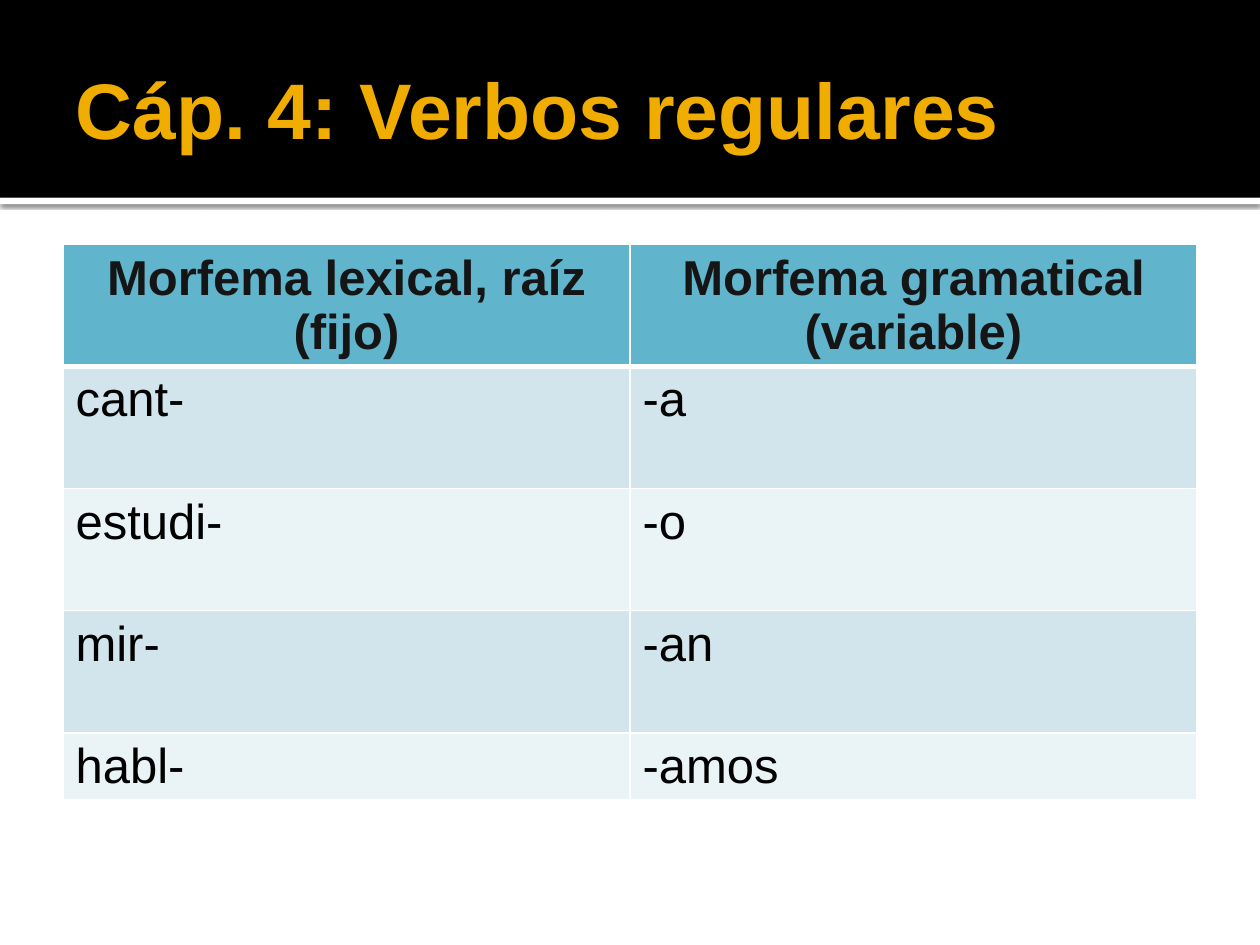
"""Build the slide on regular verbs: a title band over a table of morphemes."""
from typing import NamedTuple

from lxml.etree import SubElement
from pptx import Presentation
from pptx.dml.color import RGBColor
from pptx.enum.shapes import MSO_SHAPE
from pptx.enum.text import MSO_ANCHOR, PP_ALIGN
from pptx.oxml import parse_xml
from pptx.oxml.ns import nsdecls, qn
from pptx.util import Inches, Pt

COLORS = {
    "black": "000000",
    "white": "FFFFFF",
    "gold": "F0AD00",
    "ink": "151516",
    "header": "60B5CC",
    "odd": "D2E5EC",
    "even": "EAF3F6",
}


class Band(NamedTuple):
    top: float
    height: float
    color: str
    shadow: bool


class Verb(NamedTuple):
    root: str
    ending: str
    height: float


BANDS = [Band(1.57, 0.05, "white", True), Band(0, 1.57, "black", False)]
HEADINGS = ["Morfema lexical, raíz\n(fijo)", "Morfema gramatical\n(variable)"]
HEADING_HEIGHT = 0.96
VERBS = [
    Verb("cant-", "-a", 0.97),
    Verb("estudi-", "-o", 0.97),
    Verb("mir-", "-an", 0.97),
    Verb("habl-", "-amos", 0.53),
]


def rgb(color: str) -> RGBColor:
    return RGBColor.from_string(COLORS[color])


def write(frame, text: str, *, size: float, color: str = "black",
          bold: bool = False, align=PP_ALIGN.LEFT) -> None:
    frame.text = text
    for paragraph in frame.paragraphs:
        paragraph.alignment = align
        for run in paragraph.runs:
            run.font.name = "Arial"
            run.font.size = Pt(size)
            run.font.bold = bold
            run.font.color.rgb = rgb(color)


def draw_band(slide, band: Band) -> None:
    strip = slide.shapes.add_shape(MSO_SHAPE.RECTANGLE, 0, Inches(band.top),
                                   Inches(10), Inches(band.height))
    strip.fill.solid()
    strip.fill.fore_color.rgb = rgb(band.color)
    strip.line.fill.background()
    strip.shadow.inherit = False
    if band.shadow:
        effects = strip._element.spPr.find(qn("a:effectLst"))
        shadow = SubElement(effects, qn("a:outerShdw"), blurRad=str(Pt(2.5)),
                            dist=str(Pt(0.8)), dir="5400000", rotWithShape="0")
        tint = SubElement(shadow, qn("a:srgbClr"), val=COLORS["black"])
        SubElement(tint, qn("a:alpha"), val="60000")


def draw_title(slide, text: str) -> None:
    title = slide.shapes.title
    title.left, title.top = Inches(0.5), Inches(0.17)
    title.width, title.height = Inches(9), Inches(1.37)
    frame = title.text_frame
    frame.vertical_anchor = MSO_ANCHOR.MIDDLE
    frame.margin_left = Inches(0.1)
    frame.margin_right = Inches(0.05)
    write(frame, text, size=45, color="gold", bold=True)
    slide.shapes._spTree.append(title._element)


def set_borders(cell, bottom: float = 1, top: float = 1) -> None:
    properties = cell._tc.get_or_add_tcPr()
    widths = {"lnL": 1, "lnR": 1, "lnT": top, "lnB": bottom}
    for position, (side, width) in enumerate(widths.items()):
        properties.insert(position, parse_xml(
            f'<a:{side} {nsdecls("a")} w="{Pt(width)}"><a:solidFill>'
            f'<a:srgbClr val="{COLORS["white"]}"/></a:solidFill></a:{side}>'))


def fill_cell(cell, text: str, fill: str, *, top: float = 1,
              bottom: float = 1, **text_format) -> None:
    cell.fill.solid()
    cell.fill.fore_color.rgb = rgb(fill)
    set_borders(cell, bottom, top)
    write(cell.text_frame, text, size=28, **text_format)


def draw_verbs(slide) -> None:
    height = HEADING_HEIGHT + sum(verb.height for verb in VERBS)
    table = slide.shapes.add_table(len(VERBS) + 1, 2, Inches(0.5), Inches(1.94),
                                   Inches(9), Inches(height)).table
    table.rows[0].height = Inches(HEADING_HEIGHT)
    for column, heading in enumerate(HEADINGS):
        fill_cell(table.cell(0, column), heading, "header", bottom=3,
                  color="ink", bold=True, align=PP_ALIGN.CENTER)
    for row, verb in enumerate(VERBS, start=1):
        table.rows[row].height = Inches(verb.height)
        for column, part in enumerate((verb.root, verb.ending)):
            fill_cell(table.cell(row, column), part, "odd" if row % 2 else "even",
                      top=3 if row == 1 else 1)


def main() -> None:
    presentation = Presentation()
    presentation.slide_width = Inches(10)
    presentation.slide_height = Inches(7.5)
    slide = presentation.slides.add_slide(presentation.slide_layouts[5])
    for band in BANDS:
        draw_band(slide, band)
    draw_title(slide, "Cáp. 4: Verbos regulares")
    draw_verbs(slide)
    presentation.save("out.pptx")


if __name__ == "__main__":
    main()
